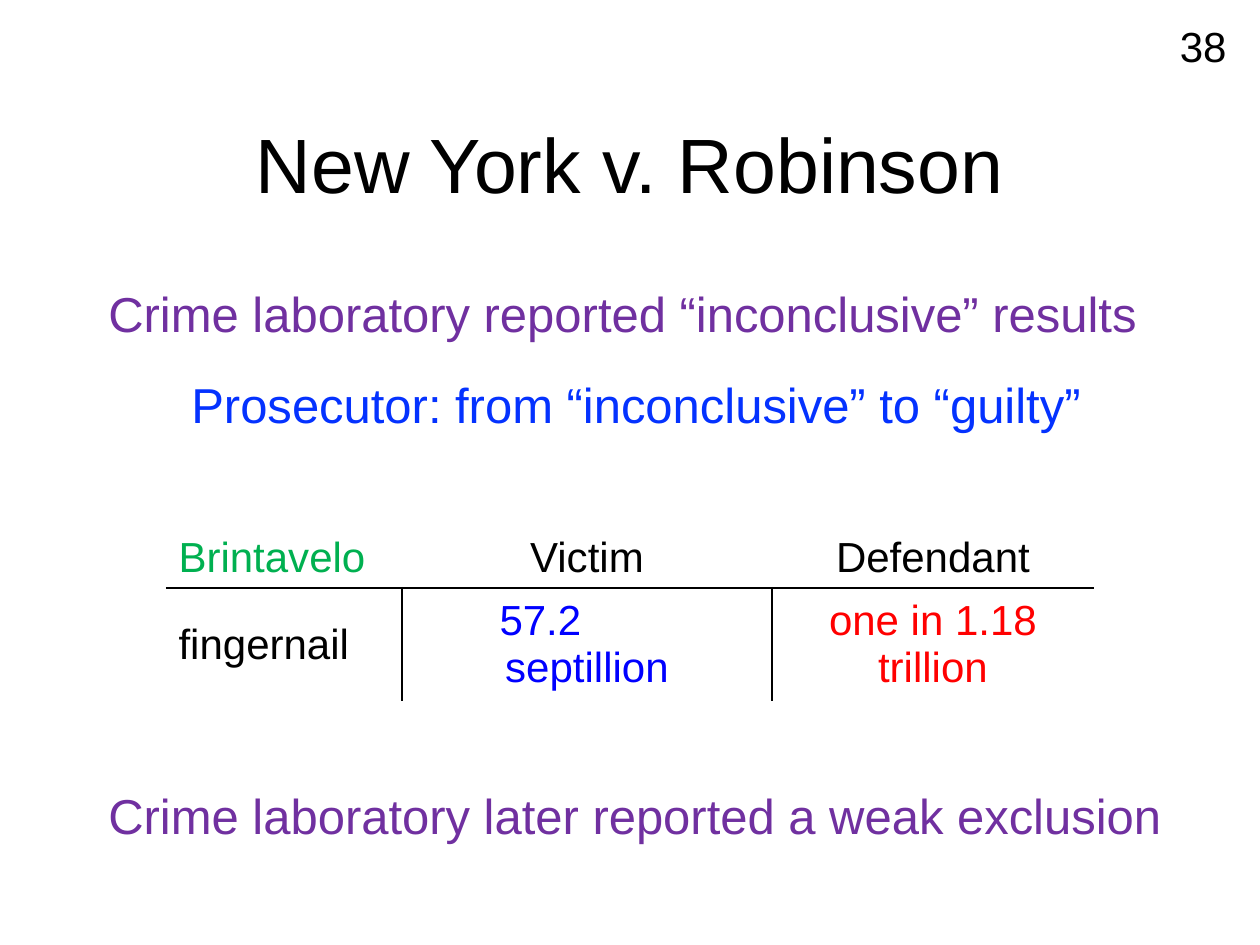
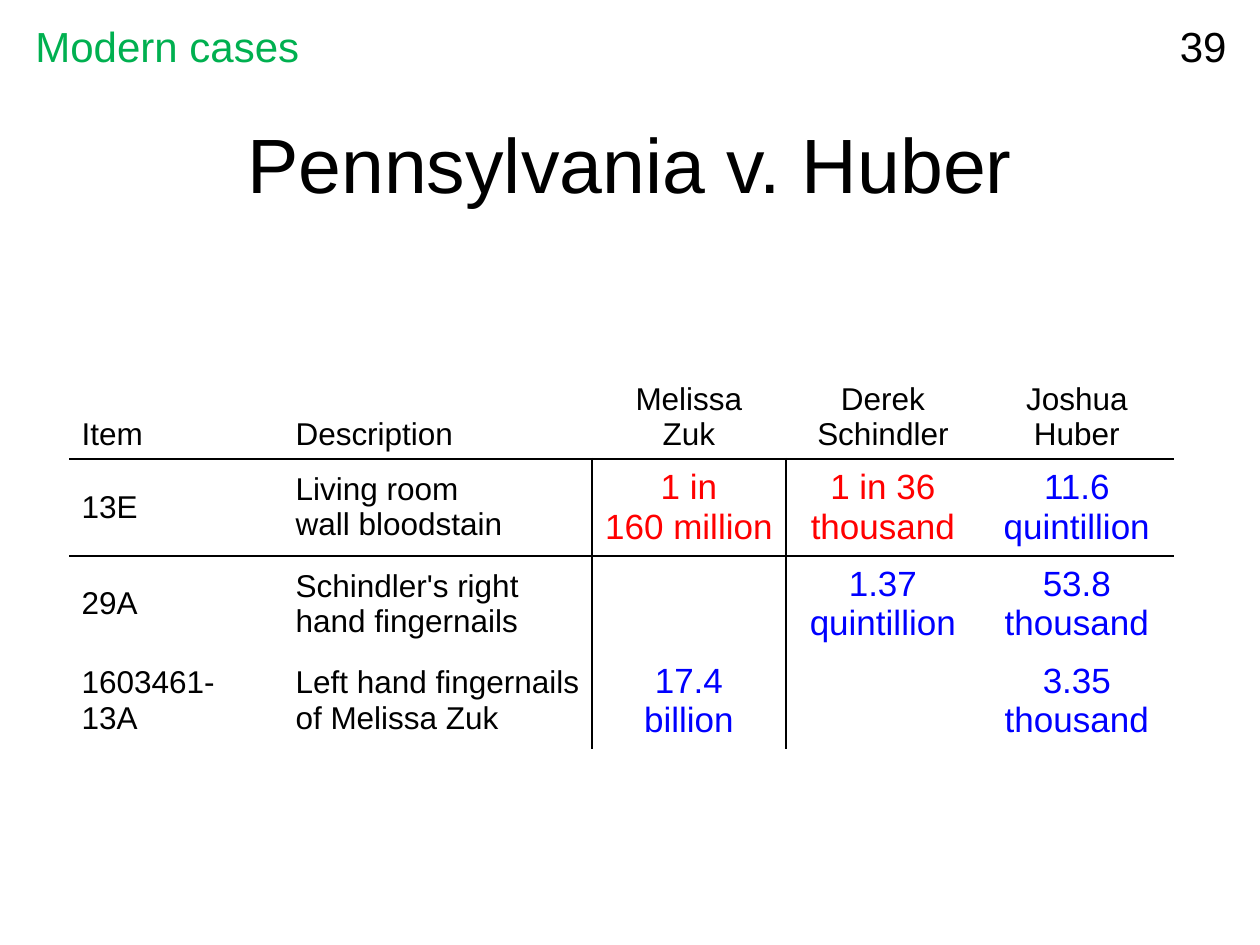
"""Build two court case slides with DNA match tables."""
from dataclasses import dataclass

from lxml import etree
from pptx import Presentation
from pptx import util as u
from pptx.dml.color import RGBColor
from pptx.enum import text
from pptx.oxml import ns

EMU_PER_PX = u.Inches(1) / 126
SLIDE_WIDTH, SLIDE_HEIGHT = 1260, 945
PLAIN_TABLE_STYLE = "{2D5ABB26-0587-4C30-8999-92F81FD0307C}"


@dataclass(frozen=True)
class Theme:
    font: str = "Arial"
    ink: str = "000000"
    accent: str = "00B050"
    laboratory: str = "7030A0"
    prosecutor: str = "0432FF"
    included: str = "0000FF"
    excluded: str = "FF0000"
    title_size: int = 44
    statement_size: int = 28
    corner_size: int = 24
    label_size: int = 18
    value_size: int = 20
    rule_width: float = 1.5


THEME = Theme()
ALIGN = text.PP_ALIGN
ANCHOR = text.MSO_ANCHOR


def px(length):
    return u.Emu(round(length * EMU_PER_PX))


def format_text(text_frame, size, colour, alignment=ALIGN.LEFT):
    for paragraph in text_frame.paragraphs:
        paragraph.alignment = alignment
        for run in paragraph.runs:
            run.font.name = THEME.font
            run.font.size = u.Pt(size)
            run.font.color.rgb = RGBColor.from_string(colour)


def add_text(slide, box, words, size, colour, alignment=ALIGN.LEFT, wrap=False, anchor=ANCHOR.TOP):
    text_frame = slide.shapes.add_textbox(*map(px, box)).text_frame
    text_frame.word_wrap = wrap
    text_frame.vertical_anchor = anchor
    text_frame.text = words
    format_text(text_frame, size, colour, alignment)


def add_case_slide(presentation, title, title_width, number):
    slide = presentation.slides.add_slide(presentation.slide_layouts[6])
    left = (SLIDE_WIDTH - title_width) // 2
    add_text(slide, (left, 84, title_width, 158), title, THEME.title_size, THEME.ink,
             ALIGN.CENTER, True, ANCHOR.MIDDLE)
    add_text(slide, (1124, 14, 115, 58), number, THEME.corner_size, THEME.ink, ALIGN.RIGHT, True)
    return slide


def add_statement(slide, left, top, width, words, colour):
    add_text(slide, (left, top, width, 72), words, THEME.statement_size, colour)


def set_borders(cell, sides):
    properties = cell._tc.get_or_add_tcPr()
    for position, side in enumerate(side for side in "LRTB" if side in sides):
        line = etree.Element(ns.qn(f"a:ln{side}"), w=str(u.Pt(THEME.rule_width)))
        fill = etree.SubElement(line, ns.qn("a:solidFill"))
        etree.SubElement(fill, ns.qn("a:srgbClr"), val=THEME.ink)
        properties.insert(position, line)


def border_sides(row, column, divider):
    sides = {0: "B", 1: "T"}.get(row, "")
    if row > 0:
        sides += {divider - 1: "R", divider: "L"}.get(column, "")
    return sides


def fill_cell(cell, words, row, is_value, label_size, value_size):
    cell.text = words
    cell.fill.background()
    cell.vertical_anchor = ANCHOR.MIDDLE if row else ANCHOR.BOTTOM
    size, colour = label_size, THEME.ink
    if is_value and row:
        size = value_size
        colour = THEME.excluded if "in" in words.split() else THEME.included
    format_text(cell.text_frame, size, colour, ALIGN.CENTER if is_value else ALIGN.LEFT)


def add_match_table(slide, left, top, widths, heights, rows, divider, label_size, value_size):
    frame = slide.shapes.add_table(len(rows), len(widths), px(left), px(top),
                                   px(sum(widths)), px(sum(heights)))
    frame.element.find(f".//{ns.qn('a:tableStyleId')}").text = PLAIN_TABLE_STYLE
    table = frame.table
    table.first_row = table.horz_banding = False
    for column, width in zip(table.columns, widths):
        column.width = px(width)
    for row, height in zip(table.rows, heights):
        row.height = px(height)
    for row, row_words in enumerate(rows):
        for column, words in enumerate(row_words):
            cell = table.cell(row, column)
            fill_cell(cell, words, row, column >= divider, label_size, value_size)
            set_borders(cell, border_sides(row, column, divider))
    return table


def indent_left(paragraph, margin):
    paragraph.alignment = ALIGN.LEFT
    paragraph._p.get_or_add_pPr().set("marL", str(px(margin)))


def build_robinson(presentation):
    slide = add_case_slide(presentation, "New York v. Robinson", 1248, "38")
    add_statement(slide, 96, 277, 1067, "Crime laboratory reported “inconclusive” results",
                  THEME.laboratory)
    add_statement(slide, 179, 368, 926, "Prosecutor: from “inconclusive” to “guilty”",
                  THEME.prosecutor)
    add_statement(slide, 96, 779, 1092, "Crime laboratory later reported a weak exclusion",
                  THEME.laboratory)
    rows = [
        ("Brintavelo", "Victim", "Defendant"),
        ("fingernail", "57.2\nseptillion", "one in 1.18 trillion"),
    ]
    table = add_match_table(slide, 166, 493, (236, 370, 322), (95, 106), rows, 1,
                            THEME.corner_size, THEME.corner_size)
    format_text(table.cell(0, 0).text_frame, THEME.corner_size, THEME.accent)
    indent_left(table.cell(1, 1).text_frame.paragraphs[0], 85)


def build_huber(presentation):
    slide = add_case_slide(presentation, "Pennsylvania v. Huber", 1070, "39")
    add_text(slide, (23, 14, 292, 63), "Modern cases", THEME.corner_size, THEME.accent)
    rows = [
        ("Item", "Description", "Melissa\nZuk", "Derek Schindler", "Joshua Huber"),
        ("13E", "Living room\nwall bloodstain", "1 in\n160 million", "1 in 36 thousand",
         "11.6 quintillion"),
        ("29A", "Schindler's right\nhand fingernails", "", "1.37 quintillion", "53.8 thousand"),
        ("1603461-13A", "Left hand fingernails\nof Melissa Zuk", "17.4\nbillion", "",
         "3.35 thousand"),
    ]
    add_match_table(slide, 69, 305, (214, 309) + (194,) * 3, (154,) + (91,) * 3, rows, 2,
                    THEME.label_size, THEME.value_size)


def main():
    presentation = Presentation()
    presentation.slide_width = px(SLIDE_WIDTH)
    presentation.slide_height = px(SLIDE_HEIGHT)
    build_robinson(presentation)
    build_huber(presentation)
    presentation.save("out.pptx")


if __name__ == "__main__":
    main()
